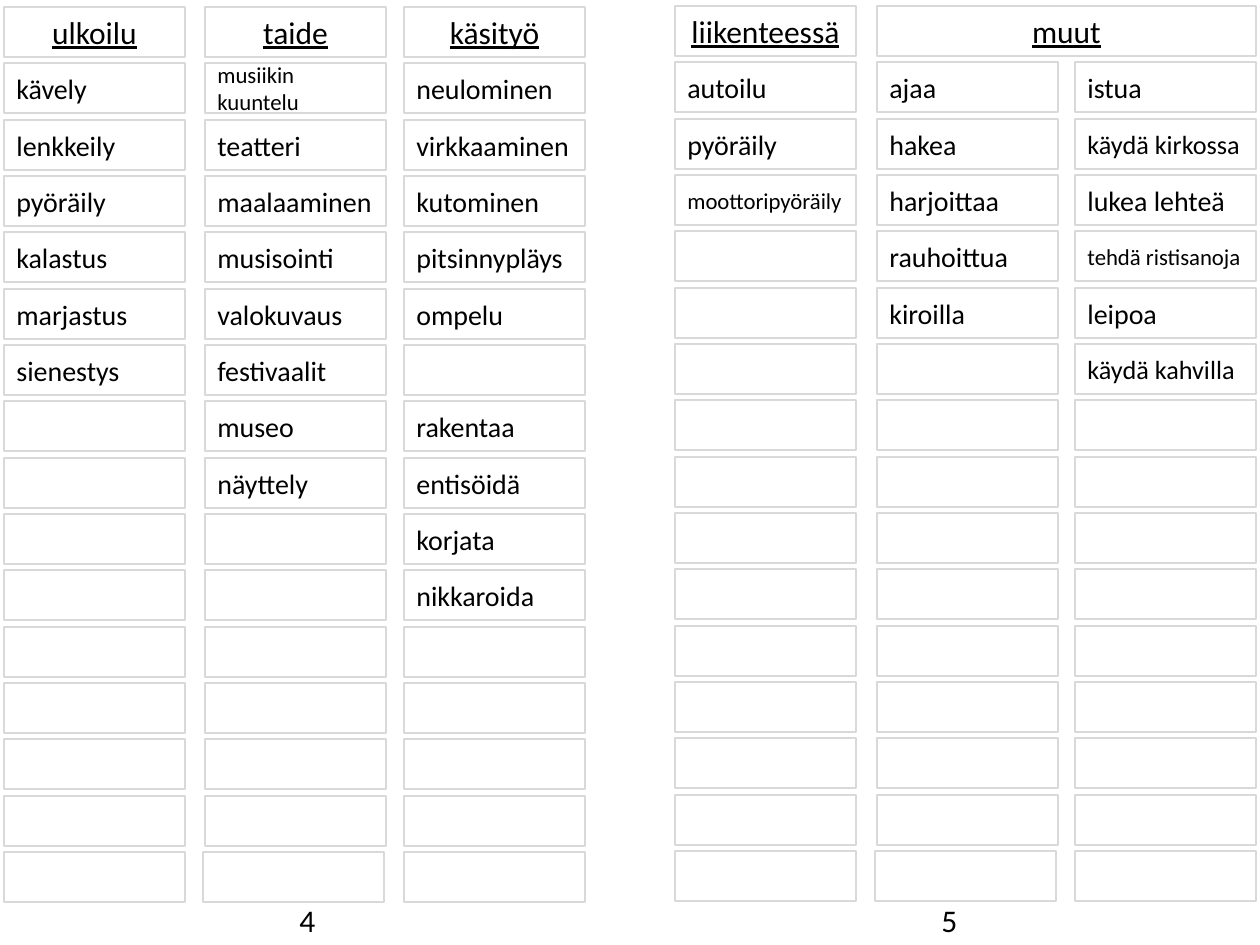
from dataclasses import dataclass, field

from pptx import Presentation
from pptx.dml.color import RGBColor
from pptx.enum.shapes import MSO_SHAPE as Preset
from pptx.enum.text import MSO_ANCHOR as Anchor, MSO_AUTO_SIZE as AutoSize, PP_ALIGN as Align
from pptx.slide import Slide
from pptx.text.text import TextFrame
from pptx.util import Emu, Pt

BLACK = RGBColor(0x00, 0x00, 0x00)
BORDER_GREY = RGBColor(0xD9, 0xD9, 0xD9)

PX_PER_INCH = 126
CELL_WIDTH, CELL_HEIGHT = 181, 50
LAST_ROW = 15
GRID_HEIGHT = 845

WORD_FORMAT = {"name": "Calibri", "size": Pt(16)}
HEADING_FORMAT = {"name": "Calibri", "size": Pt(18), "underline": True}
NUMBER_FORMAT = {"name": "Calibri", "size": Pt(18)}
WORD_SIZES = {
    "musiikin kuuntelu": 13,
    "moottoripyöräily": 13,
    "tehdä ristisanoja": 13,
    "käydä kirkossa": 15,
    "käydä kahvilla": 15,
}


@dataclass
class Column:
    left: int
    top: int
    heading: str
    words: list[str] = field(default_factory=list)
    heading_width: int = CELL_WIDTH
    last_shift: int = 0


@dataclass
class PageNumber:
    text: str
    left: int
    width: int


COLUMNS = [
    Column(4, 7, "ulkoilu",
           ["kävely", "lenkkeily", "pyöräily", "kalastus", "marjastus", "sienestys"]),
    Column(205, 7, "taide",
           ["musiikin kuuntelu", "teatteri", "maalaaminen", "musisointi",
            "valokuvaus", "festivaalit", "museo", "näyttely"], last_shift=-2),
    Column(404, 7, "käsityö",
           ["neulominen", "virkkaaminen", "kutominen", "pitsinnypläys", "ompelu",
            "", "rakentaa", "entisöidä", "korjata", "nikkaroida"]),
    Column(675, 6, "liikenteessä", ["autoilu", "pyöräily", "moottoripyöräily"]),
    Column(877, 6, "muut",
           ["ajaa", "hakea", "harjoittaa", "rauhoittua", "kiroilla"],
           heading_width=379, last_shift=-2),
    Column(1075, 6, "",
           ["istua", "käydä kirkossa", "lukea lehteä", "tehdä ristisanoja",
            "leipoa", "käydä kahvilla"]),
]
PAGE_NUMBERS = [PageNumber("4", 287, 35), PageNumber("5", 929, 45)]


def px(length: int) -> Emu:
    """Turn a length in px into EMU."""
    return Emu(round(length * 914400 / PX_PER_INCH))


def write_text(frame: TextFrame, text: str, font_format: dict, alignment: Align) -> None:
    """Write one formatted line into a text frame."""
    frame.word_wrap = True
    paragraph = frame.paragraphs[0]
    paragraph.alignment = alignment
    run = paragraph.add_run()
    run.text = text
    for name, value in font_format.items():
        setattr(run.font, name, value)
    run.font.color.rgb = BLACK


def draw_cell(slide: Slide, left: int, top: int, width: int, text: str,
              font_format: dict, alignment: Align = Align.LEFT) -> None:
    """Draw one outlined cell with its word, if it has one."""
    shape = slide.shapes.add_shape(
        Preset.RECTANGLE, px(left), px(top), px(width), px(CELL_HEIGHT))
    shape.shadow.inherit = False
    shape.fill.background()
    shape.line.color.rgb = BORDER_GREY
    shape.line.width = Pt(1)
    if text:
        shape.text_frame.vertical_anchor = Anchor.MIDDLE
        write_text(shape.text_frame, text, font_format, alignment)


def draw_column(slide: Slide, column: Column) -> None:
    """Draw the heading of a column and its word cells."""
    if column.heading:
        draw_cell(slide, column.left, column.top, column.heading_width,
                  column.heading, HEADING_FORMAT, Align.CENTER)
    for row in range(1, LAST_ROW + 1):
        word = column.words[row - 1] if row <= len(column.words) else ""
        left = column.left + (column.last_shift if row == LAST_ROW else 0)
        top = column.top + round(row * GRID_HEIGHT / LAST_ROW)
        font_format = WORD_FORMAT | {"size": Pt(WORD_SIZES.get(word, 16))}
        draw_cell(slide, left, top, CELL_WIDTH, word, font_format)


def draw_page_number(slide: Slide, number: PageNumber) -> None:
    """Draw a page number below the grid."""
    box = slide.shapes.add_textbox(px(number.left), px(895), px(number.width), px(50))
    write_text(box.text_frame, number.text, NUMBER_FORMAT, Align.LEFT)
    box.text_frame.auto_size = AutoSize.SHAPE_TO_FIT_TEXT


def main() -> None:
    """Build the word list slide and save it."""
    presentation = Presentation()
    presentation.slide_width = px(1260)
    presentation.slide_height = px(945)
    slide = presentation.slides.add_slide(presentation.slide_layouts[6])
    for number in PAGE_NUMBERS:
        draw_page_number(slide, number)
    for column in COLUMNS:
        draw_column(slide, column)
    presentation.save("out.pptx")


if __name__ == "__main__":
    main()
